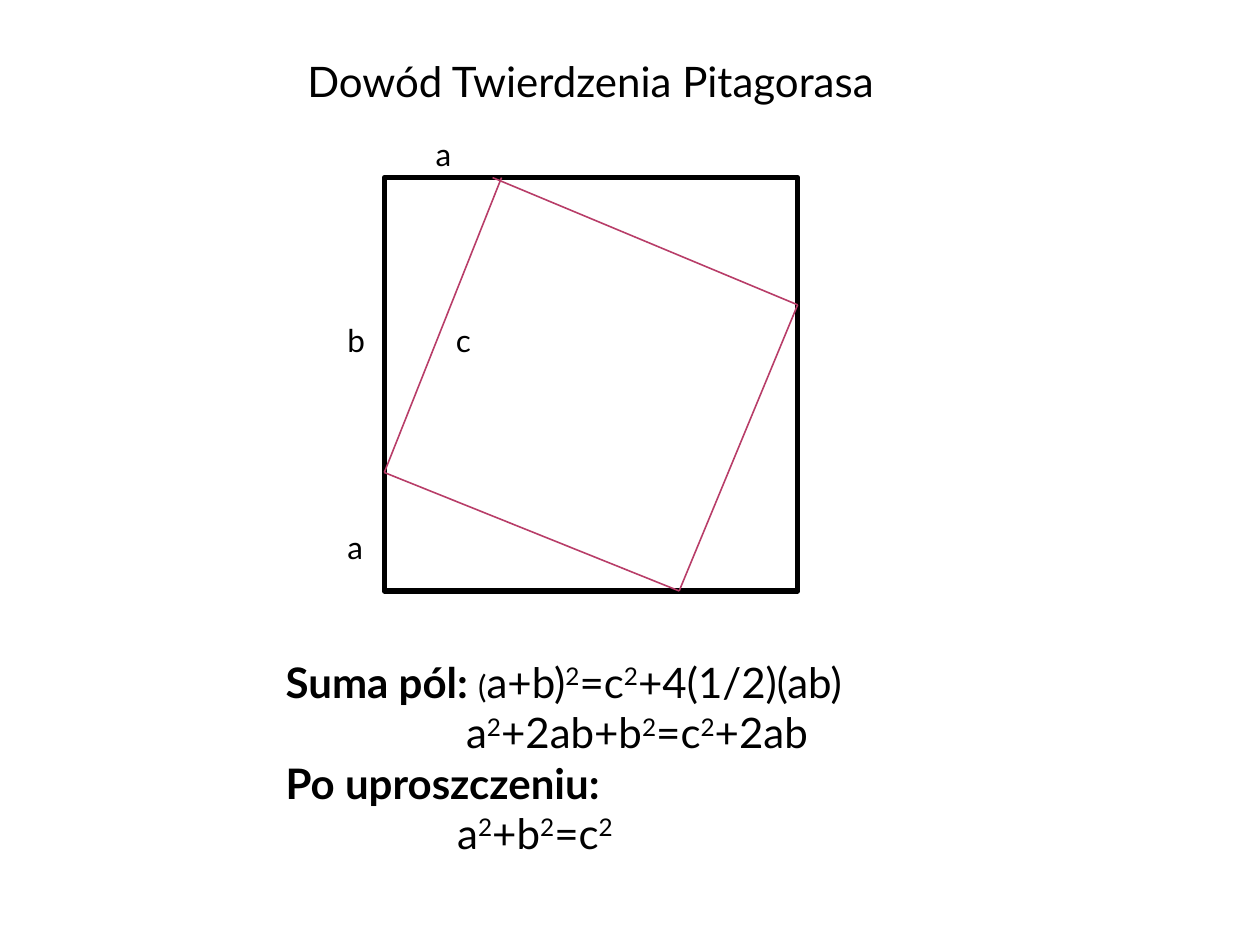
from dataclasses import dataclass

from lxml import etree
from pptx import Presentation
from pptx.dml.color import RGBColor
from pptx.enum.shapes import MSO_CONNECTOR, MSO_SHAPE
from pptx.oxml.ns import qn
from pptx.util import Pt

RECTANGLE = MSO_SHAPE.RECTANGLE
STRAIGHT = MSO_CONNECTOR.STRAIGHT


@dataclass(frozen=True)
class Theme:
    font: str = "Lato"
    ink: RGBColor = RGBColor(0x00, 0x00, 0x00)
    paper: RGBColor = RGBColor(0xFF, 0xFF, 0xFF)
    accent: RGBColor = RGBColor(0xB8, 0x3D, 0x68)
    body: int = 24
    label: int = 18


THEME = Theme()

# Outer square
LEFT, TOP, SIDE = 219.6, 101.5, 236.2
RIGHT, BOTTOM = LEFT + SIDE, TOP + SIDE
LONG_LEG = 168.5

# Corners of the inner square; its two upper sides meet the top edge slightly apart
ON_LEFT = (LEFT, TOP + LONG_LEG)
ON_BOTTOM = (LEFT + LONG_LEG, BOTTOM)
ON_RIGHT = (RIGHT, TOP + 72.7)
INNER_SIDES = [
    ((281.5, TOP), ON_RIGHT),
    (ON_RIGHT, ON_BOTTOM),
    ((286.6, TOP), ON_LEFT),
    (ON_LEFT, ON_BOTTOM),
]

LABEL_X = 191.5
LABELS = [
    ("b", LABEL_X, 180),
    ("a", 241.9, 73.4),
    ("c", 253.4, 180),
    ("a", LABEL_X, 298.1),
]

# Each line: indent, bold lead, formula in which ² marks a superscript 2
PROOF = [
    (0, "Suma pól: ", "(a+b)²=c²+4(1/2)(ab)"),
    (103, "", "a²+2ab+b²=c²+2ab"),
    (0, "Po uproszczeniu:", ""),
    (98, "", "a²+b²=c²"),
]


def add_run(p, text, size, bold=False, superscript=False):
    r = p.add_run()
    r.text = text
    font = r.font
    font.name, font.size, font.bold = THEME.font, Pt(size), bold
    font.color.rgb = THEME.ink
    if superscript:
        r._r.get_or_add_rPr().set("baseline", "30000")


def add_formula(p, formula):
    """Add the formula with raised exponents and a smaller opening bracket."""
    if formula.startswith("("):
        add_run(p, "(", THEME.label)
        formula = formula[1:]
    first, *rest = formula.split("²")
    add_run(p, first, THEME.body)
    for part in rest:
        add_run(p, "2", THEME.body, superscript=True)
        if part:
            add_run(p, part, THEME.body)


def add_box(s, left, top, width, height, wrap=False):
    tf = s.shapes.add_textbox(Pt(left), Pt(top), Pt(width), Pt(height)).text_frame
    tf.word_wrap = wrap
    return tf


def add_square(s):
    sp = s.shapes.add_shape(RECTANGLE, Pt(LEFT), Pt(TOP), Pt(SIDE), Pt(SIDE))
    sp.shadow.inherit = False
    sp.fill.solid()
    sp.fill.fore_color.rgb = THEME.paper
    sp.line.color.rgb = THEME.ink
    sp.line.width = Pt(3.15)


def add_line(s, start, end):
    line = s.shapes.add_connector(STRAIGHT, *(Pt(v) for v in (*start, *end)))
    line.line.color.rgb = THEME.accent
    line.line.width = Pt(0.9)
    etree.SubElement(line._element.spPr, qn("a:effectLst"))


def add_proof(s):
    tf = add_box(s, 156.2, 371.5, 430.6, 123.8, wrap=True)
    for i, (indent, lead, formula) in enumerate(PROOF):
        p = tf.add_paragraph() if i else tf.paragraphs[0]
        if indent:
            pPr = p._p.get_or_add_pPr()
            pPr.set("marL", str(Pt(indent)))
            pPr.set("indent", "0")
        if lead:
            add_run(p, lead, THEME.body, bold=True)
        if formula:
            add_formula(p, formula)


def main():
    prs = Presentation()
    prs.slide_width, prs.slide_height = Pt(720), Pt(540)
    s = prs.slides.add_slide(prs.slide_layouts[6])

    title = add_box(s, 168.5, 28.1, 342, 58.3)
    add_run(title.paragraphs[0], "Dowód Twierdzenia Pitagorasa", THEME.body)

    add_square(s)
    for start, end in INNER_SIDES:
        add_line(s, start, end)
    for text, left, top in LABELS:
        tf = add_box(s, left, top, 24.5, 28.8)
        add_run(tf.paragraphs[0], text, THEME.label)
    add_proof(s)

    prs.save("out.pptx")


if __name__ == "__main__":
    main()
